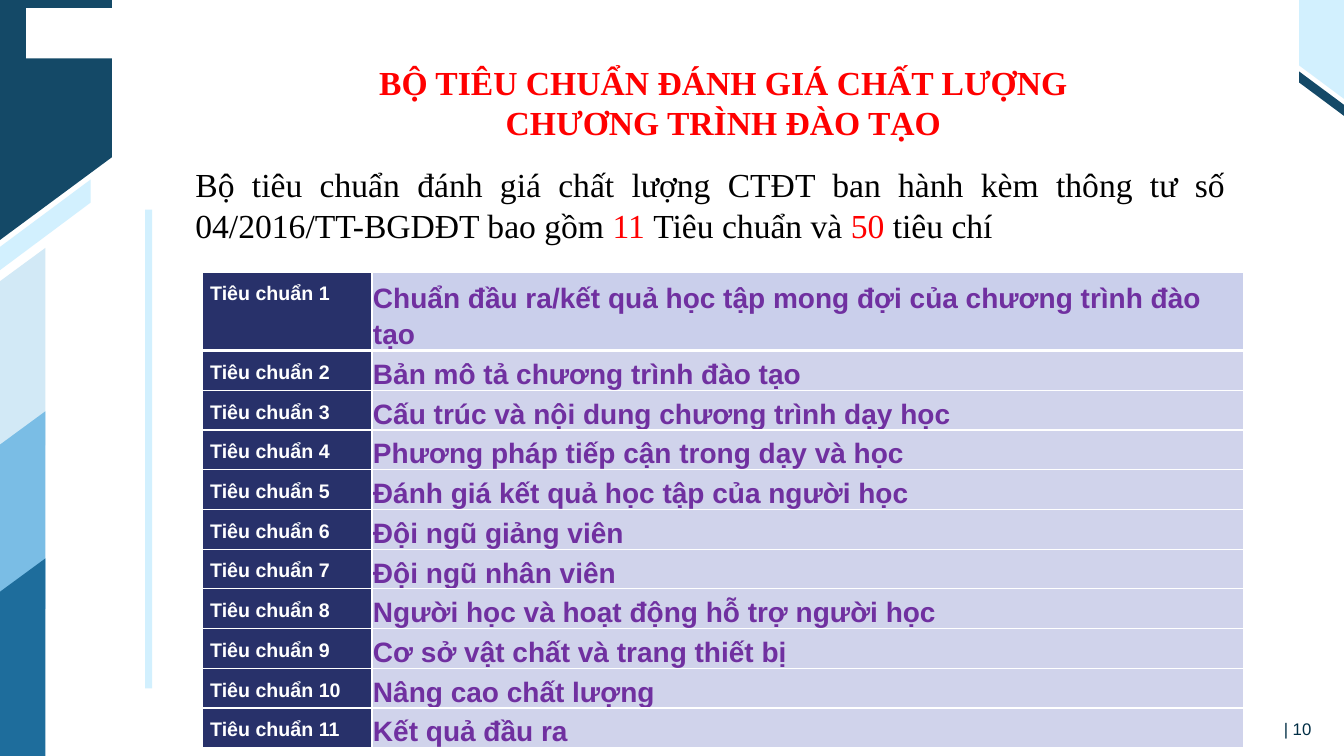
from lxml import etree
from pptx import Presentation
from pptx.dml.color import RGBColor
from pptx.enum import shapes as kinds, text as txt
from pptx.oxml.ns import qn
from pptx.util import Pt

WHITE = RGBColor(0xFF, 0xFF, 0xFF)
BLACK = RGBColor(0, 0, 0)
RED = RGBColor(0xFF, 0, 0)
NAVY = RGBColor(0x14, 0x49, 0x67)
PALE = RGBColor(0xD2, 0xE9, 0xF6)
ICE = RGBColor(0xD2, 0xF0, 0xFE)
SKY = RGBColor(0x7A, 0xBD, 0xE5)
BLUE = RGBColor(0x1E, 0x6D, 0x9C)
INK = RGBColor(0x01, 0x2E, 0x45)
INDIGO = RGBColor(0x28, 0x31, 0x6A)
PURPLE = RGBColor(0x70, 0x30, 0xA0)
LILAC = RGBColor(0xCA, 0xCF, 0xEB)
MIST = RGBColor(0xD0, 0xD3, 0xEB)

SERIF, SANS = "Times New Roman", "Arial"
ALIGN = txt.PP_ALIGN

TITLE = ["BỘ TIÊU CHUẨN ĐÁNH GIÁ CHẤT LƯỢNG", "CHƯƠNG TRÌNH ĐÀO TẠO"]
INTRO = [
    ("Bộ tiêu chuẩn đánh giá chất lượng CTĐT ban hành kèm thông tư số "
     "04/2016/TT-BGDĐT bao gồm ", BLACK),
    ("11 ", RED),
    ("Tiêu chuẩn và ", BLACK),
    ("50 ", RED),
    ("tiêu chí", BLACK),
]
CRITERIA = [
    "Chuẩn đầu ra/kết quả học tập mong đợi của chương trình đào tạo",
    "Bản mô tả chương trình đào tạo",
    "Cấu trúc và nội dung chương trình dạy học",
    "Phương pháp tiếp cận trong dạy và học",
    "Đánh giá kết quả học tập của người học",
    "Đội ngũ giảng viên",
    "Đội ngũ nhân viên",
    "Người học và hoạt động hỗ trợ người học",
    "Cơ sở vật chất và trang thiết bị",
    "Nâng cao chất lượng",
    "Kết quả đầu ra",
]


def paint(shape, color):
    shape.shadow.inherit = False
    shape.fill.solid()
    shape.fill.fore_color.rgb = color
    shape.line.fill.background()


def bar(slide, x, y, w, h, color):
    rect = kinds.MSO_SHAPE.RECTANGLE
    paint(slide.shapes.add_shape(rect, Pt(x), Pt(y), Pt(w), Pt(h)), color)


def slant(slide, x, y, w, left, right, color):
    """Draw a four-sided shape from its (top, bottom) heights at each side."""
    spots = [(x, y + left[0]), (x + w, y + right[0]),
             (x + w, y + right[1]), (x, y + left[1])]
    spots = [(Pt(a), Pt(b)) for a, b in spots]
    form = slide.shapes.build_freeform(*spots[0])
    form.add_line_segments(spots[1:], close=True)
    paint(form.convert_to_shape(), color)


def left_trim(slide, x, y):
    slant(slide, x, y, 80, (0, 171.4), (0, 112.3), NAVY)
    slant(slide, x, y, 64.8, (176.4, 193), (128.2, 144.7), ICE)
    bar(slide, x + 18.7, y + 5.8, 128.9, 36, WHITE)
    for top, color in ((177.1, PALE), (293.8, SKY), (398.9, BLUE)):
        slant(slide, x, y + top, 32.4, (23.8, 141.1), (0, 141.1), color)
    bar(slide, x + 103.7, y + 149.8, 5, 342, ICE)


def right_trim(slide, x, y, w):
    slant(slide, x, y, w, (51.1, 59), (74.9, 82.8), NAVY)
    slant(slide, x, y, w, (0, 46.8), (0, 70.6), ICE)


def style(run, font, size, color, bold=False):
    run.font.name = font
    run.font.size = Pt(size)
    run.font.bold = bold
    run.font.color.rgb = color


def text_box(slide, x, y, w, h):
    frame = slide.shapes.add_textbox(Pt(x), Pt(y), Pt(w), Pt(h)).text_frame
    frame.word_wrap = True
    return frame


def title(slide, x, y, w, h):
    frame = text_box(slide, x, y, w, h)
    frame.vertical_anchor = txt.MSO_ANCHOR.MIDDLE
    frame.text = "\n".join(TITLE)
    for para in frame.paragraphs:
        para.alignment = ALIGN.CENTER
        style(para.runs[0], SERIF, 24, RED, True)


def intro(slide, x, y, w, h):
    para = text_box(slide, x, y, w, h).paragraphs[0]
    para.alignment = ALIGN.JUSTIFY
    for words, color in INTRO:
        run = para.add_run()
        run.text = words
        style(run, SERIF, 24, color)


def page(slide, x, y, w, h):
    frame = text_box(slide, x, y, w, h)
    frame.margin_left = Pt(5)
    frame.text = "| 10"
    style(frame.paragraphs[0].runs[0], SANS, 12, INK)


def edge(cell, side, width):
    props = cell._tc.get_or_add_tcPr()
    line = etree.SubElement(props, qn("a:ln" + side), w=str(Pt(width)))
    fill = etree.SubElement(line, qn("a:solidFill"))
    etree.SubElement(fill, qn("a:srgbClr"), val=str(WHITE))


def fill_cell(cell, words, row, back, color, size, pad, spacing, after):
    widths = {"L": 1, "R": 1, "T": 3 if row == 1 else 1, "B": 3 if row == 0 else 1}
    for side, width in widths.items():
        edge(cell, side, width)
    cell.fill.solid()
    cell.fill.fore_color.rgb = back
    cell.margin_left = cell.margin_right = Pt(pad)
    cell.margin_top = cell.margin_bottom = 0
    cell.text = words
    para = cell.text_frame.paragraphs[0]
    para.line_spacing = spacing
    para.space_after = Pt(after)
    style(para.runs[0], SANS, size, color, True)
    return para


def criteria(slide, x, y, w, first, rest):
    """Build the table from the heights of its first row and of the rest."""
    count = len(CRITERIA)
    height = first + rest * (count - 1)
    table = slide.shapes.add_table(count, 2, Pt(x), Pt(y), Pt(w), Pt(height)).table
    table.first_row = table.horz_banding = False
    table.columns[0].width = Pt(121)
    table.columns[1].width = Pt(w - 121)
    for row, words in enumerate(CRITERIA):
        table.rows[row].height = Pt(rest if row else first)
        label, name = table.cell(row, 0), table.cell(row, 1)
        para = fill_cell(label, f"Tiêu chuẩn {row + 1}", row,
                         INDIGO, WHITE, 14, 5.4, 1.5, 3)
        para.alignment = ALIGN.JUSTIFY
        fill_cell(name, words, row, MIST if row else LILAC, PURPLE, 20, 0.75, 1.15, 6)
        name.margin_top = Pt(0.75)
        name.vertical_anchor = txt.MSO_ANCHOR.BOTTOM


def main():
    deck = Presentation()
    deck.slide_width, deck.slide_height = Pt(960), Pt(540)
    slide = deck.slides.add_slide(deck.slide_layouts[6])
    left_trim(slide, 0, 0)
    right_trim(slide, 928, 0, 32)
    page(slide, 912, 510, 48, 21.6)
    intro(slide, 132.5, 113.8, 750, 372)
    title(slide, 170, 40.3, 693.4, 65.5)
    criteria(slide, 144.7, 194.4, 743.8, 54.7, 28.4)
    deck.save("out.pptx")


if __name__ == "__main__":
    main()
